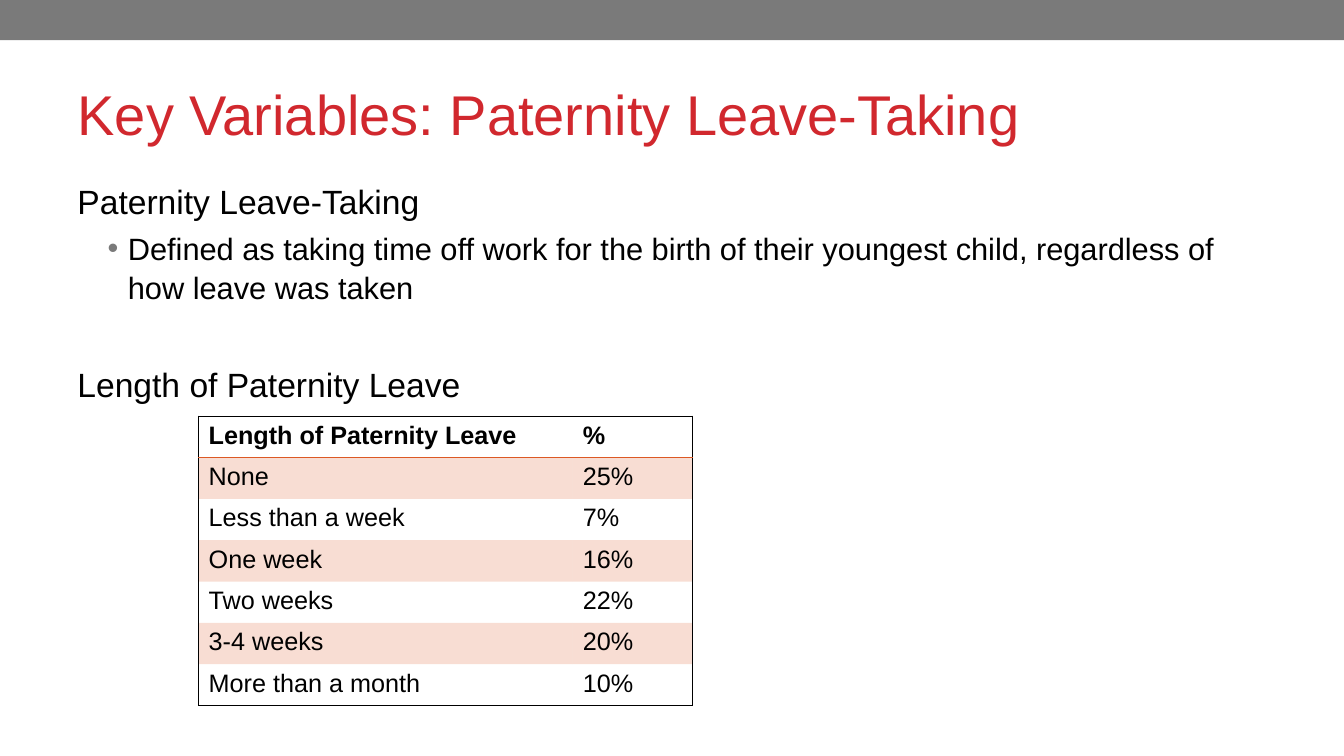
from lxml import etree
from pptx import Presentation
from pptx.dml.color import RGBColor
from pptx.enum.shapes import MSO_SHAPE
from pptx.enum.text import MSO_ANCHOR, PP_ALIGN
from pptx.oxml.ns import qn
from pptx.util import Inches, Pt

# Content
TITLE = "Key Variables: Paternity Leave-Taking"
BODY = [  # text, size, space before, line spacing, bulleted
    ("Paternity Leave-Taking", 24, 0, 1.0, False),
    ("Defined as taking time off work for the birth of their youngest child, "
     "regardless of how leave was taken", 22, 4.4, 1.05, True),
    ("Length of Paternity Leave", 24, 41.5, 1.0, False),
]
LEAVE_ROWS = [
    ("Length of Paternity Leave", "%"),
    ("None", "25%"),
    ("Less than a week", "7%"),
    ("One week", "16%"),
    ("Two weeks", "22%"),
    ("3-4 weeks", "20%"),
    ("More than a month", "10%"),
]
COLUMN_WIDTHS = (3.71, 1.19)
ROW_HEIGHT = 0.41
FONT = "Arial"
COLORS = {"band": "7A7A7A", "title": "D1282E", "text": "000000", "accent": "DC5924"}


def format_runs(paragraph, size, color, bold=False):
    for run in paragraph.runs:
        run.font.name = FONT
        run.font.size = Pt(size)
        run.font.bold = bold
        run.font.color.rgb = RGBColor.from_string(COLORS[color])


def add_bullet(paragraph):
    properties = paragraph._p.get_or_add_pPr()
    properties.set("marL", str(Inches(0.5)))
    properties.set("indent", str(Inches(-0.2)))
    bullet_color = etree.SubElement(properties, qn("a:buClr"))
    etree.SubElement(bullet_color, qn("a:srgbClr"), val=COLORS["band"])
    etree.SubElement(properties, qn("a:buFont"), typeface=FONT)
    etree.SubElement(properties, qn("a:buChar"), char="•")


def set_borders(cell, borders):
    """Draw the named sides in their colours and clear the others."""
    properties = cell._tc.get_or_add_tcPr()
    for index, side in enumerate("LRTB"):
        line = etree.Element(qn(f"a:ln{side}"), w=str(Pt(1)))
        if side in borders:
            fill = etree.SubElement(line, qn("a:solidFill"))
            etree.SubElement(fill, qn("a:srgbClr"), val=COLORS[borders[side]])
        else:
            etree.SubElement(line, qn("a:noFill"))
        properties.insert(index, line)


def fill_cell(cell, tinted):
    if not tinted:
        cell.fill.background()
        return
    cell.fill.solid()
    cell.fill.fore_color.rgb = RGBColor.from_string(COLORS["accent"])
    color = cell._tc.tcPr.find(f"{qn('a:solidFill')}/{qn('a:srgbClr')}")
    etree.SubElement(color, qn("a:alpha"), val="20000")


def cell_borders(row, column):
    borders = {"R" if column else "L": "text"}
    if row == 0:
        borders.update(T="text", B="accent")
    elif row == 1:
        borders["T"] = "accent"
    elif row == len(LEAVE_ROWS) - 1:
        borders["B"] = "text"
    return borders


def add_leave_table(slide):
    frame = slide.shapes.add_table(
        len(LEAVE_ROWS), len(COLUMN_WIDTHS), Inches(1.97), Inches(4.13),
        Inches(sum(COLUMN_WIDTHS)), Inches(ROW_HEIGHT * len(LEAVE_ROWS)))
    table = frame.table
    table.first_row = table.horz_banding = False
    for column, width in zip(table.columns, COLUMN_WIDTHS):
        column.width = Inches(width)
    for row_index, values in enumerate(LEAVE_ROWS):
        table.rows[row_index].height = Inches(ROW_HEIGHT)
        for column_index, value in enumerate(values):
            cell = table.cell(row_index, column_index)
            cell.text_frame.text = value
            format_runs(cell.text_frame.paragraphs[0], 18, "text", row_index == 0)
            fill_cell(cell, row_index % 2 == 1)
            set_borders(cell, cell_borders(row_index, column_index))


def main():
    presentation = Presentation()
    presentation.slide_width = Inches(13.33)
    presentation.slide_height = Inches(7.5)
    slide = presentation.slides.add_slide(presentation.slide_layouts[5])

    # Top band
    band = slide.shapes.add_shape(MSO_SHAPE.RECTANGLE, 0, 0,
                                  presentation.slide_width, Inches(0.4))
    band.shadow.inherit = False
    band.fill.solid()
    band.fill.fore_color.rgb = RGBColor.from_string(COLORS["band"])
    band.line.fill.background()

    # Title
    title = slide.shapes.title
    title.left, title.top = Inches(0.67), Inches(0.58)
    title.width, title.height = Inches(12), Inches(1.08)
    title.text_frame.text = TITLE
    title.text_frame.vertical_anchor = MSO_ANCHOR.MIDDLE
    title.text_frame.paragraphs[0].alignment = PP_ALIGN.LEFT
    format_runs(title.text_frame.paragraphs[0], 40, "title")

    # Body text
    body = slide.shapes.add_textbox(Inches(0.67), Inches(1.75), Inches(12), Inches(5.33))
    text_frame = body.text_frame
    text_frame.word_wrap = True
    text_frame.text = "\n".join(entry[0] for entry in BODY)
    for paragraph, (_, size, before, spacing, bulleted) in zip(text_frame.paragraphs, BODY):
        paragraph.space_before = Pt(before)
        paragraph.line_spacing = spacing
        format_runs(paragraph, size, "text")
        if bulleted:
            paragraph.level = 1
            add_bullet(paragraph)

    # Leave lengths
    add_leave_table(slide)

    presentation.save("out.pptx")


if __name__ == "__main__":
    main()
